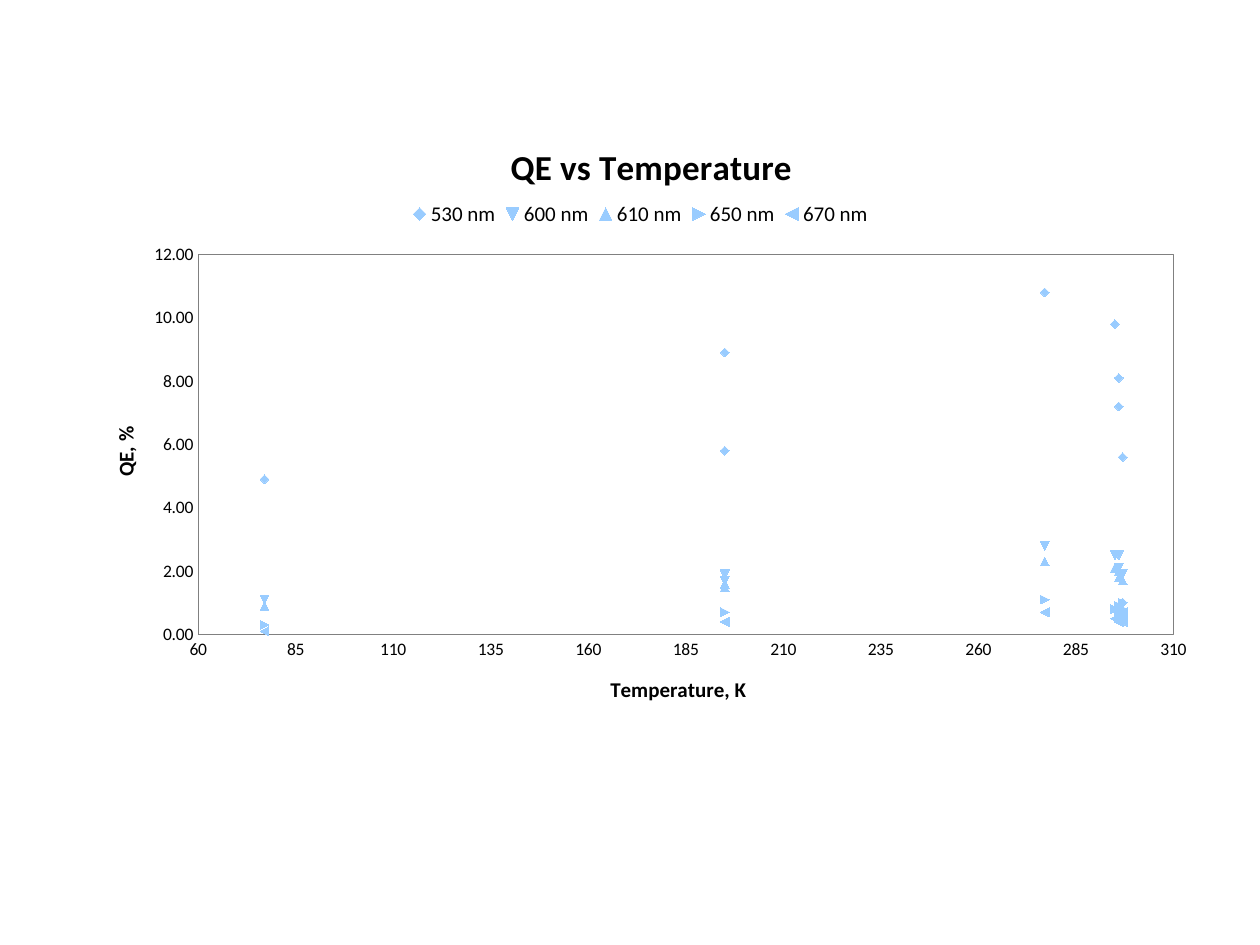
from lxml import etree
from pptx import Presentation
from pptx.chart.data import XyChartData
from pptx.dml.color import RGBColor
from pptx.enum.chart import XL_CHART_TYPE, XL_LEGEND_POSITION, XL_TICK_MARK
from pptx.oxml import parse_xml
from pptx.oxml.ns import qn
from pptx.util import Pt

SCATTER = XL_CHART_TYPE.XY_SCATTER
TOP = XL_LEGEND_POSITION.TOP
NO_TICK = XL_TICK_MARK.NONE

FONT = "Calibri"
COLORS = {"text": "000000", "marker": "99CCFF", "axis": "808080"}
NS_A = "http://schemas.openxmlformats.org/drawingml/2006/main"
NS_C = "http://schemas.openxmlformats.org/drawingml/2006/chart"

TEMPERATURES = [295, 277, 296, 195, 296, 195, 297, 77, 297, 296]
EFFICIENCIES = {
    "530 nm": [9.8, 10.8, 8.1, 8.9, 7.2, 5.8, 5.6, 4.9, 1, 0.9],
    "600 nm": [2.5, 2.8, 2.5, 1.9, 2.1, 1.7, 1.9, 1.1, 0.5, 0.5],
    "610 nm": [2.1, 2.3, 2, 1.6, 1.8, 1.5, 1.7, 0.9, 0.8, 0.7],
    "650 nm": [0.8, 1.1, 0.9, 0.7, 0.7, 0.7, 1, 0.3, 0.8, 0.6],
    "670 nm": [0.5, 0.7, 0.6, 0.4, 0.4, 0.4, 0.7, 0.1, 0.4, 0.4],
}


def rgb(name):
    return RGBColor.from_string(COLORS[name])


def style_font(font, size, bold=False):
    font.name = FONT
    font.size = Pt(size)
    font.bold = bold
    font.color.rgb = rgb("text")


def set_layout(element, after, **place):
    """Place a chart part by fractions of the chart's size."""
    for old in element.findall(qn("c:layout")):
        element.remove(old)
    layout = etree.Element(qn("c:layout"))
    manual = etree.SubElement(layout, qn("c:manualLayout"))
    if after is None:
        etree.SubElement(manual, qn("c:layoutTarget")).set("val", "inner")
    for axis in ("xMode", "yMode"):
        etree.SubElement(manual, qn(f"c:{axis}")).set("val", "edge")
    for key, value in place.items():
        etree.SubElement(manual, qn(f"c:{key}")).set("val", str(value))
    if after is None:
        element.insert(0, layout)
    else:
        element.find(qn(after)).addnext(layout)


def set_title(title, text, size, x, y):
    tf = title.text_frame
    tf.text = text
    style_font(tf.paragraphs[0].runs[0].font, size, bold=True)
    set_layout(title._element, "c:tx", x=x, y=y)


def style_axis(axis, low, high, step, number_format):
    axis.minimum_scale, axis.maximum_scale = low, high
    axis.major_unit = step
    axis.has_major_gridlines = False
    axis.major_tick_mark = axis.minor_tick_mark = NO_TICK
    axis.tick_labels.number_format = number_format
    axis.tick_labels.number_format_is_linked = False
    style_font(axis.tick_labels.font, 10)
    axis.format.line.color.rgb = rgb("axis")
    axis.format.line.width = Pt(0.75)


def add_scatter(s, left, top, width, height):
    data = XyChartData(number_format="0.00")
    for name, values in EFFICIENCIES.items():
        series = data.add_series(name)
        for x, y in zip(TEMPERATURES, values):
            series.add_data_point(x, y)
    chart = s.shapes.add_chart(
        SCATTER, Pt(left), Pt(top), Pt(width), Pt(height), data).chart
    style_font(chart.font, 10)
    plot = chart.plots[0]
    plot.vary_by_categories = False

    # Markers only, shaped automatically by series order
    for series in plot.series:
        series.smooth = False
        series.format.line.fill.background()
        series.marker.size = 5
        series.marker.format.fill.solid()
        series.marker.format.fill.fore_color.rgb = rgb("marker")
        series.marker.format.line.fill.background()

    # Axes and titles
    x_axis, y_axis = chart.category_axis, chart.value_axis
    style_axis(x_axis, 60, 310, 25, "0")
    style_axis(y_axis, 0, 12, 2, "0.00")
    chart.has_title = True
    set_title(chart.chart_title, "QE vs Temperature", 20, 0.38, 0.05)
    set_title(x_axis.axis_title, "Temperature, K", 12, 0.47, 0.91)
    set_title(y_axis.axis_title, "QE, %", 12, 0.03, 0.51)
    body = y_axis.axis_title.text_frame._txBody.find(qn("a:bodyPr"))
    body.set("rot", "-5400000")
    body.set("vert", "horz")

    # Legend
    chart.has_legend = True
    chart.legend.position = TOP
    chart.legend.include_in_layout = False
    style_font(chart.legend.font, 12)
    set_layout(chart.legend._element, "c:legendPos",
               x=0.29, y=0.15, w=0.42, h=0.05)

    # Framed plot area
    area = chart._chartSpace.chart.plotArea
    set_layout(area, None, x=0.11, y=0.24, w=0.86, h=0.61)
    area.append(parse_xml(
        f'<c:spPr xmlns:c="{NS_C}" xmlns:a="{NS_A}"><a:noFill/>'
        f'<a:ln w="9525"><a:solidFill><a:srgbClr val="{COLORS["axis"]}"/>'
        '</a:solidFill></a:ln></c:spPr>'))


def main():
    prs = Presentation()
    prs.slide_width, prs.slide_height = Pt(720), Pt(540)
    s = prs.slides.add_slide(prs.slide_layouts[6])
    add_scatter(s, 42, 60, 648, 356)
    prs.save("out.pptx")


if __name__ == "__main__":
    main()
